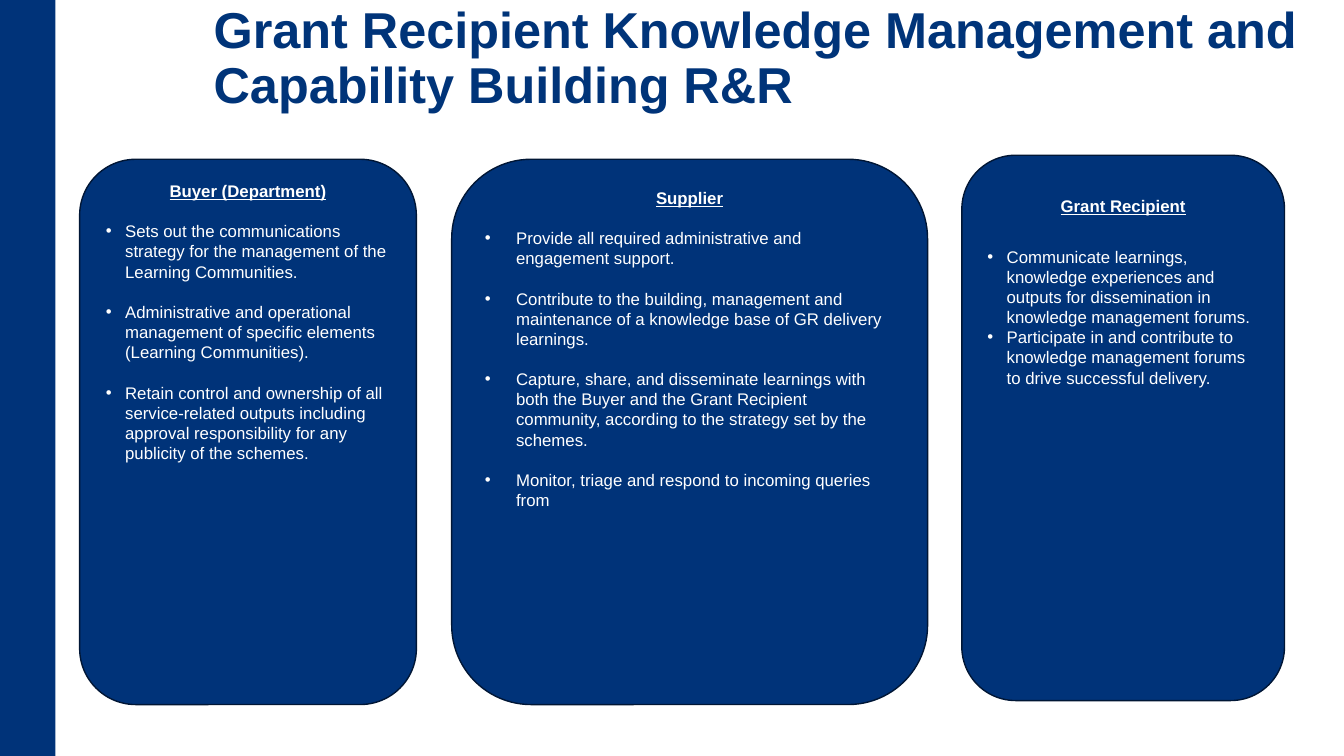
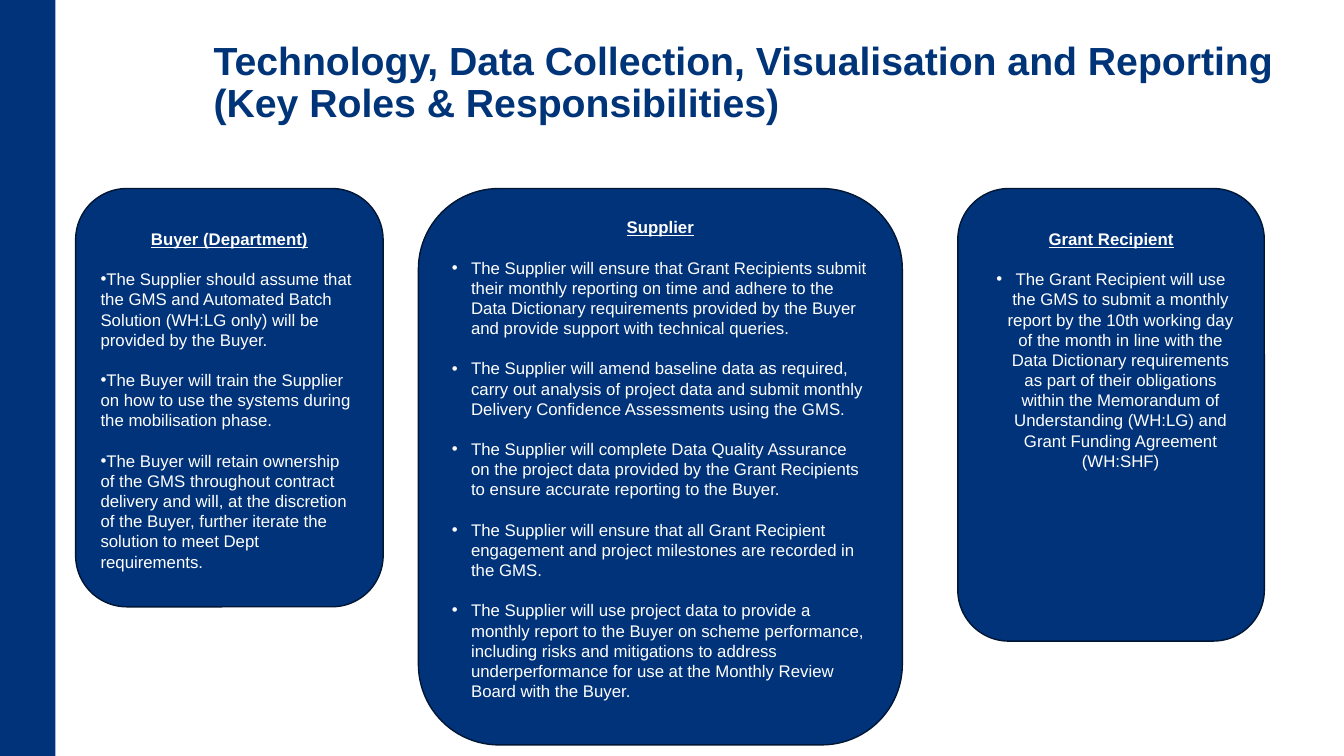
"""Build two slides of roles and responsibilities cards."""
from dataclasses import dataclass

from lxml.etree import SubElement as Sub
from pptx import Presentation
from pptx.dml.color import RGBColor as Rgb
from pptx.enum.shapes import MSO_SHAPE as Kind
from pptx.enum.text import MSO_ANCHOR as Anchor, PP_ALIGN as Align
from pptx.oxml.ns import qn
from pptx.util import Inches, Pt


@dataclass(frozen=True)
class Theme:
    font: str = "Arial"
    navy: Rgb = Rgb(0x00, 0x33, 0x79)
    title: Rgb = Rgb(0x00, 0x34, 0x79)
    edge: Rgb = Rgb(0x00, 0x16, 0x35)
    white: Rgb = Rgb(0xFF, 0xFF, 0xFF)
    body: float = 12
    line: float = 14.4


THEME = Theme()


@dataclass(frozen=True)
class Card:
    left: float
    top: float
    width: float
    height: float
    head: str
    items: tuple[str, ...]
    inset: float = 0.05
    lead: float = THEME.line
    gap: float = THEME.line
    margin: float = 0.19
    hang: float = 0.19
    align: Align = Align.LEFT


@dataclass(frozen=True)
class Page:
    title: str
    size: float
    top: float
    cards: tuple[Card, ...]


BUYER, SUPPLIER, GRANTEE = "Buyer (Department)", "Supplier", "Grant Recipient"
LOW = 0.25

PAGES = (
    Page("Grant Recipient Knowledge Management and Capability Building R&R", 36, 0.3, (
        Card(0.79, 1.58, 3.34, 5.41, BUYER, (
            "Sets out the communications strategy for the management of the Learning Communities.",
            "Administrative and operational management of specific elements (Learning Communities).",
            "Retain control and ownership of all service-related outputs including approval "
            "responsibility for any publicity of the schemes.",
        )),
        Card(4.48, 1.58, 4.72, 5.41, SUPPLIER, (
            "Provide all required administrative and engagement support.",
            "Contribute to the building, management and maintenance of a knowledge base of GR "
            "delivery learnings.",
            "Capture, share, and disseminate learnings with both the Buyer and the Grant Recipient "
            "community, according to the strategy set by the schemes.",
            "Monitor, triage and respond to incoming queries from",
        ), margin=0.31, hang=0.31),
        Card(9.54, 1.54, 3.2, 5.41, GRANTEE, (
            "Communicate learnings, knowledge experiences and outputs for dissemination in "
            "knowledge management forums.",
            "Participate in and contribute to knowledge management forums to drive successful "
            "delivery.",
        ), inset=LOW, lead=21.5, gap=0),
    )),
    Page("Technology, Data Collection, Visualisation and Reporting "
         "(Key Roles & Responsibilities)", 28, 0.42, (
        Card(0.75, 1.87, 3.05, 4.15, BUYER, (
            "The Supplier should assume that the GMS and Automated Batch Solution (WH:LG only) "
            "will be provided by the Buyer.",
            "The Buyer will train the Supplier on how to use the systems during the mobilisation "
            "phase.",
            "The Buyer will retain ownership of the GMS throughout contract delivery and will, at "
            "the discretion of the Buyer, further iterate the solution to meet Dept requirements.",
        ), inset=LOW, margin=0),
        Card(4.15, 1.87, 4.8, 5.52, SUPPLIER, (
            "The Supplier will ensure that Grant Recipients submit their monthly reporting on "
            "time and adhere to the Data Dictionary requirements provided by the Buyer and "
            "provide support with technical queries.",
            "The Supplier will amend baseline data as required, carry out analysis of project "
            "data and submit monthly Delivery Confidence Assessments using the GMS.",
            "The Supplier will complete Data Quality Assurance on the project data provided by "
            "the Grant Recipients to ensure accurate reporting to the Buyer.",
            "The Supplier will ensure that all Grant Recipient engagement and project milestones "
            "are recorded in the GMS.",
            "The Supplier will use project data to provide a monthly report to the Buyer on "
            "scheme performance, including risks and mitigations to address underperformance "
            "for use at the Monthly Review Board with the Buyer.",
        )),
        Card(9.5, 1.87, 3.04, 4.49, GRANTEE, (
            "The Grant Recipient will use the GMS to submit a monthly report by the 10th working "
            "day of the month in line with the Data Dictionary requirements as part of their "
            "obligations within the Memorandum of Understanding (WH:LG) and Grant Funding "
            "Agreement (WH:SHF)",
        ), inset=LOW, align=Align.CENTER),
    )),
)


def place(left: float, top: float, width: float, height: float) -> tuple:
    return Inches(left), Inches(top), Inches(width), Inches(height)


def style(para, size: float, color: Rgb, bold: bool = False, under: bool = False) -> None:
    for run in para.runs:
        font = run.font
        font.name, font.size, font.bold = THEME.font, Pt(size), bold
        font.underline = under
        font.color.rgb = color


def solid(slide, kind: Kind, area: tuple):
    shape = slide.shapes.add_shape(kind, *area)
    shape.shadow.inherit = False
    shape.fill.solid()
    shape.fill.fore_color.rgb = THEME.navy
    return shape


def bullet(para, margin: float, hang: float) -> None:
    props = para._p.get_or_add_pPr()
    props.set("marL", str(Inches(margin)))
    props.set("indent", str(-Inches(hang)))
    Sub(props, qn("a:buFont"), typeface=THEME.font)
    Sub(props, qn("a:buChar"), char="•")


def draw_card(slide, card: Card) -> None:
    shape = solid(slide, Kind.ROUNDED_RECTANGLE,
                  place(card.left, card.top, card.width, card.height))
    shape.line.color.rgb = THEME.edge
    shape.line.width = Pt(1)
    frame = shape.text_frame
    frame.word_wrap = True
    frame.vertical_anchor = Anchor.TOP
    frame.margin_top = Inches(card.inset)
    frame.text = card.head
    head = frame.paragraphs[0]
    head.alignment = Align.CENTER
    style(head, THEME.body, THEME.white, bold=True, under=True)
    for rank, item in enumerate(card.items):
        para = frame.add_paragraph()
        para.text = item
        para.alignment = card.align
        para.space_before = Pt(card.gap if rank else card.lead)
        bullet(para, card.margin, card.hang)
        style(para, THEME.body, THEME.white)


def draw_title(slide, page: Page) -> None:
    frame = slide.shapes.add_textbox(*place(2.02, page.top, 11.18, 0.88)).text_frame
    frame.word_wrap = True
    frame.vertical_anchor = Anchor.BOTTOM
    frame.text = page.title
    para = frame.paragraphs[0]
    para.line_spacing = 0.9
    style(para, page.size, THEME.title, bold=True)


def draw_page(deck, page: Page) -> None:
    slide = deck.slides.add_slide(deck.slide_layouts[6])
    band = solid(slide, Kind.RECTANGLE, place(0, 0, 0.55, 7.5))
    band.line.fill.background()
    draw_title(slide, page)
    for card in page.cards:
        draw_card(slide, card)


def main() -> None:
    deck = Presentation()
    deck.slide_width, deck.slide_height = Inches(13.33), Inches(7.5)
    for page in PAGES:
        draw_page(deck, page)
    deck.save("out.pptx")


if __name__ == "__main__":
    main()
